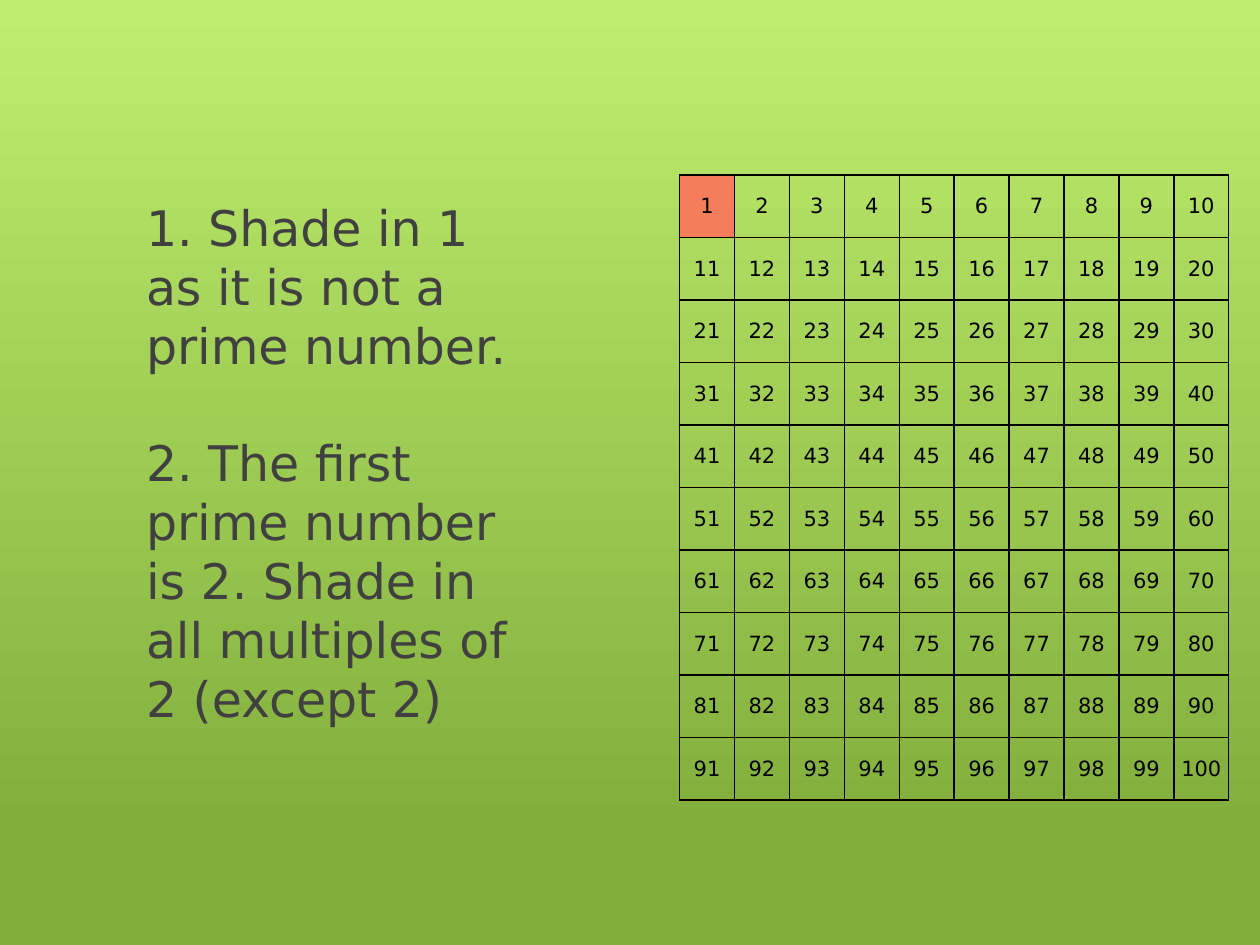
from lxml import etree
from pptx import Presentation
from pptx import util as u
from pptx.dml.color import RGBColor
from pptx.enum import text
from pptx.oxml.ns import qn

FONT = "DejaVu Sans"
LIGHT_GREEN = RGBColor(0xBF, 0xEE, 0x6F)
DARK_GREEN = RGBColor(0x82, 0xAE, 0x3C)
GREY = RGBColor(0x40, 0x40, 0x40)
BLACK = RGBColor(0, 0, 0)
CORAL = RGBColor(0xF4, 0x7E, 0x5A)

STEPS = [
    "1. Shade in 1 as it is not a prime number.",
    "2. The first prime number is 2. Shade in all multiples of 2 (except 2)",
]
SIZE = 10
SHADED = {1}


def format_runs(p, size, color):
    for r in p.runs:
        r.font.name = FONT
        r.font.size = u.Pt(size)
        r.font.bold = False
        r.font.color.rgb = color


def set_background(s):
    fill = s.background.fill
    fill.gradient()
    fill.gradient_angle = 270
    stops = [(0, LIGHT_GREEN), (0.88, DARK_GREEN)]
    for stop, (position, color) in zip(fill.gradient_stops, stops):
        stop.position = position
        stop.color.rgb = color


def add_steps(s):
    sp = s.shapes.title
    sp.left, sp.top, sp.width, sp.height = u.Cm(2.69), u.Cm(2.72), u.Cm(8.41), u.Cm(13.2)
    tf = sp.text_frame
    tf.text = "\n".join(STEPS)
    tf.word_wrap = True
    tf.auto_size = text.MSO_AUTO_SIZE.NONE
    tf.vertical_anchor = text.MSO_ANCHOR.MIDDLE
    line = u.Pt(33.6)
    for i, p in enumerate(tf.paragraphs):
        p.alignment = text.PP_ALIGN.LEFT
        p.line_spacing = line
        p.space_before = line if i else u.Pt(0)
        format_runs(p, 28, GREY)


def add_borders(cell):
    tc_pr = cell._tc.get_or_add_tcPr()
    for side in ("lnL", "lnR", "lnT", "lnB"):
        ln = etree.SubElement(tc_pr, qn(f"a:{side}"), w=str(u.Pt(1)))
        fill = etree.SubElement(ln, qn("a:solidFill"))
        etree.SubElement(fill, qn("a:srgbClr"), val=str(BLACK))


def fill_cell(cell, number):
    add_borders(cell)
    if number in SHADED:
        cell.fill.solid()
        cell.fill.fore_color.rgb = CORAL
    else:
        cell.fill.background()
    cell.vertical_anchor = text.MSO_ANCHOR.MIDDLE
    cell.margin_left = cell.margin_right = u.Cm(0.1)
    p = cell.text_frame.paragraphs[0]
    p.text = str(number)
    p.alignment = text.PP_ALIGN.CENTER
    format_runs(p, 12, BLACK)


def add_number_grid(s):
    frame = s.shapes.add_table(
        SIZE, SIZE, u.Cm(13.7), u.Cm(3.53), u.Cm(11.07), u.Cm(12.6)
    )
    table = frame.table
    table.first_row = table.horz_banding = False
    for number, cell in enumerate(table.iter_cells(), 1):
        fill_cell(cell, number)


def main():
    prs = Presentation()
    prs.slide_width, prs.slide_height = u.Cm(25.4), u.Cm(19.05)
    s = prs.slides.add_slide(prs.slide_layouts[5])
    set_background(s)
    add_steps(s)
    add_number_grid(s)
    prs.save("out.pptx")


if __name__ == "__main__":
    main()
